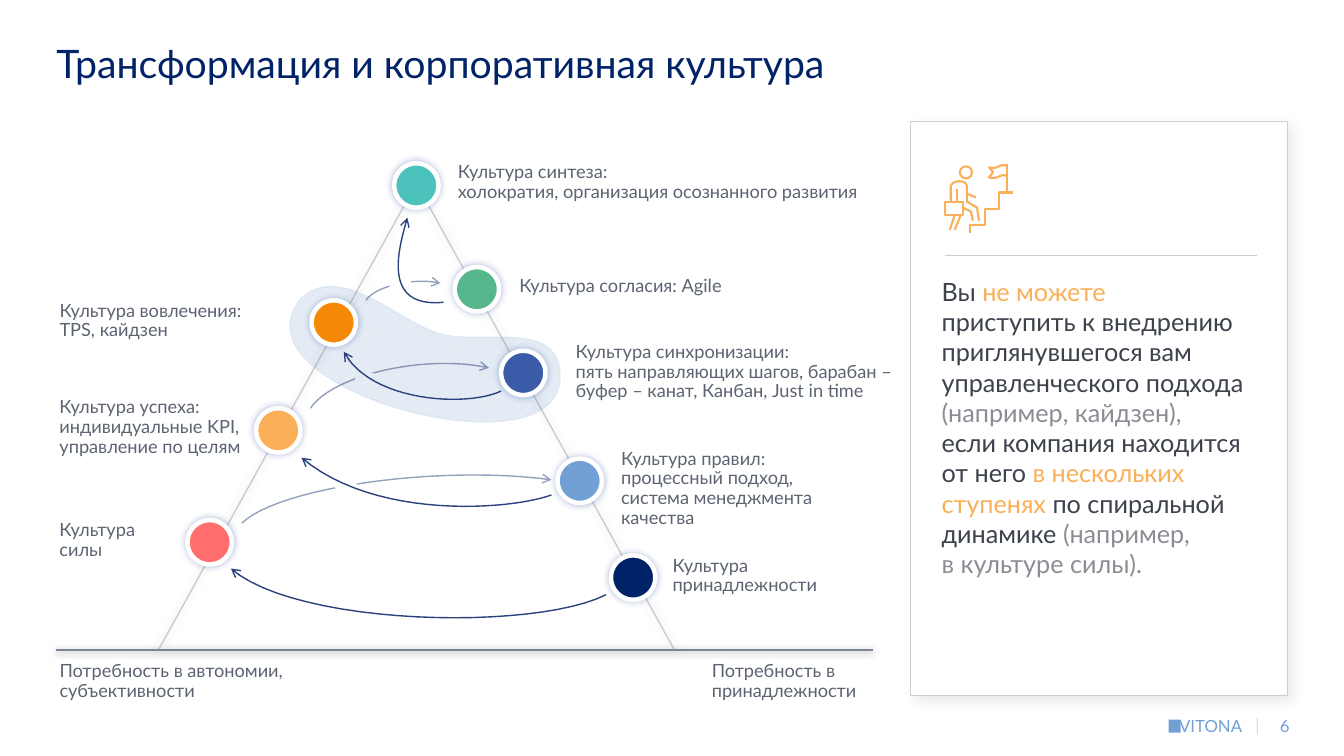
"""Build the slide on transformation and corporate culture."""
from dataclasses import dataclass
from typing import NamedTuple, Optional

from lxml.etree import SubElement
from pptx import Presentation
from pptx.dml.color import RGBColor
from pptx.enum.dml import MSO_PATTERN
from pptx.enum.shapes import MSO_CONNECTOR, MSO_SHAPE
from pptx.enum.text import MSO_ANCHOR, MSO_AUTO_SIZE, PP_ALIGN
from pptx.oxml.ns import qn
from pptx.util import Pt

SCALE = 9144
CURVE_STEPS = 24


@dataclass(frozen=True)
class Theme:
    font: str = "Lato"
    title_size: int = 28
    card_size: int = 18
    label_size: int = 13
    footer_size: int = 12
    navy: str = "002266"
    ink: str = "3D424C"
    grey: str = "5C6472"
    steel: str = "7D8696"
    rule: str = "CBCFD5"
    white: str = "FFFFFF"
    black: str = "000000"
    mist: str = "DFE8F2"
    arrow: str = "2B437C"
    royal: str = "3A5BA7"
    sky: str = "72A0D5"
    amber: str = "FAAF58"
    orange: str = "F68807"
    coral: str = "FF6D6D"
    green: str = "56B78D"
    teal: str = "4CC2BC"


THEME = Theme()


class Box(NamedTuple):
    left: int
    top: int
    width: int
    height: int


class Shadow(NamedTuple):
    color: str
    opacity: int
    blur: int
    distance: int = 0
    angle: int = 0


class Span(NamedTuple):
    text: str
    color: str
    opacity: int = 100


class Outline(NamedTuple):
    color: str
    width: float
    opacity: int = 100


class Label(NamedTuple):
    text: str
    box: Box
    inset_top: int = 5


class Node(NamedTuple):
    left: int
    top: int
    color: str


class Curve(NamedTuple):
    start: tuple
    pieces: list
    opacity: int = 100


class Rule(NamedTuple):
    start: tuple
    end: tuple
    outline: Outline
    shadow: Optional[Shadow] = None


CARD = Box(903, 120, 374, 570)
CARD_SPANS = [
    Span("Вы ", THEME.ink), Span("не можете \n", THEME.amber),
    Span("приступить к внедрению приглянувшегося вам управленческого подхода ", THEME.ink),
    Span("(например, кайдзен), \n", THEME.ink, 60),
    Span("если компания находится \nот него ", THEME.ink),
    Span("в нескольких ступенях ", THEME.amber), Span("по спиральной динамике ", THEME.ink),
    Span("(например, \nв культуре силы).", THEME.ink, 60)]
LABELS = [
    Label("Культура синтеза: \nхолократия, организация осознанного развития", Box(442, 157, 428, 49)),
    Label("Культура согласия: Agile", Box(503, 270, 242, 30)),
    Label("Культура синхронизации: \nпять направляющих шагов, барабан – буфер – канат, Канбан, Just in time",
          Box(559, 335, 338, 69)),
    Label("Культура правил: \nпроцессный подход, \nсистема менеджмента качества", Box(604, 441, 284, 69)),
    Label("Культура принадлежности", Box(655, 547, 191, 49)),
    Label("Потребность в принадлежности", Box(694, 645, 184, 56), 12),
    Label("Потребность в автономии, субъективности", Box(47, 645, 289, 56), 12),
    Label("Культура вовлечения: \nTPS, кайдзен", Box(47, 294, 252, 49)),
    Label("Культура успеха: индивидуальные KPI, управление по целям", Box(47, 390, 223, 73)),
    Label("Культура силы", Box(47, 512, 130, 52))]
NODES = [
    Node(606, 551, THEME.navy), Node(186, 516, THEME.coral), Node(553, 455, THEME.sky),
    Node(497, 348, THEME.royal), Node(451, 265, THEME.green), Node(391, 162, THEME.teal),
    Node(254, 405, THEME.amber), Node(309, 298, THEME.orange)]
RULES = [
    Rule((937, 253), (1247, 253), Outline(THEME.rule, 0.5)),
    Rule((56, 645), (866, 645), Outline(THEME.steel, 1), Shadow(THEME.black, 40, 5, 1, 90)),
    Rule((1247, 712), (1247, 729), Outline(THEME.sky, 0.5, 50))]
BLOB = Curve((555, 381), [(562, 313, 478, 344, 435, 331), (392, 317, 335, 258, 297, 298),
                          (229, 384, 540, 470, 555, 381)])
FORWARD_ARROWS = [
    Curve((240, 519), [(277, 483, 437, 461, 547, 476)], 50),
    Curve((308, 405), [(330, 372, 422, 351, 485, 365)], 50),
    Curve((363, 298), [(372, 284, 411, 275, 437, 281)], 50)]
RETURN_ARROWS = [
    Curve((601, 590), [(530, 626, 294, 621, 229, 564)]),
    Curve((547, 491), [(506, 506, 372, 516, 299, 454)]),
    Curve((497, 388), [(463, 404, 368, 399, 341, 349)]),
    Curve((440, 300), [(377, 306, 396, 245, 404, 216)])]
GAPS = [(331, 473, False), (352, 369, True), (385, 273, False)]
CLIMBER = [
    Curve((962, 231), [(962, 223), (977, 223), (977, 207), (991, 207), (991, 191), (1005, 191)]),
    Curve((999, 191), [(999, 163)]),
    Curve((999, 165), [(993, 161, 989, 169, 981, 166), (985, 171), (981, 176),
                       (989, 179, 993, 171, 999, 175)]),
    Curve((937, 200), [(955, 200), (955, 213), (937, 213), (937, 200)]),
    Curve((943, 200), [(943, 186), (943, 178, 959, 178, 959, 185), (959, 200), (969, 206), (971, 219)]),
    Curve((949, 188), [(949, 200)]),
    Curve((955, 206), [(963, 210), (965, 219)]),
    Curve((959, 192), [(968, 196)]),
    Curve((947, 213), [(942, 228)]),
    Curve((953, 213), [(947, 228)])]


def scaled(values) -> list:
    return [round(value * SCALE) for value in values]


def apply(target, **values) -> None:
    for name, value in values.items():
        setattr(target, name, value)


def fade(element, opacity: int) -> None:
    if opacity < 100:
        for color in element.iter(qn("a:srgbClr")):
            SubElement(color, qn("a:alpha"), val=str(opacity * 1000))


def cast_shadow(effects, shadow: Optional[Shadow]) -> None:
    if shadow:
        outer = SubElement(effects, qn("a:outerShdw"), blurRad=str(Pt(shadow.blur)),
                           dist=str(Pt(shadow.distance)), dir=str(shadow.angle * 60000),
                           algn="ctr", rotWithShape="0")
        SubElement(outer, qn("a:srgbClr"), val=shadow.color)
        fade(outer, shadow.opacity)


def draw_outline(shape, outline: Outline) -> None:
    shape.line.color.rgb = RGBColor.from_string(outline.color)
    shape.line.width = Pt(outline.width)
    fade(shape._element.spPr.find(qn("a:ln")), outline.opacity)


def hatch(shape) -> None:
    shape.fill.patterned()
    shape.fill.pattern = MSO_PATTERN.LIGHT_UPWARD_DIAGONAL
    shape.fill.fore_color.rgb = RGBColor.from_string(THEME.white)
    shape.fill.back_color.rgb = RGBColor.from_string(THEME.mist)


def style(shape, fill: Optional[str], outline: Optional[Outline], shadow: Optional[Shadow] = None):
    if fill:
        shape.fill.solid()
        shape.fill.fore_color.rgb = RGBColor.from_string(fill)
    else:
        shape.fill.background()
    if outline:
        draw_outline(shape, outline)
    else:
        shape.line.fill.background()
    shape.shadow.inherit = False
    cast_shadow(shape._element.spPr.find(qn("a:effectLst")), shadow)
    return shape


def add_preset(page, kind, box: Box, fill=None, outline=None, shadow=None):
    return style(page.shapes.add_shape(kind, *scaled(box)), fill, outline, shadow)


def add_rule(page, rule: Rule) -> None:
    line = page.shapes.add_connector(MSO_CONNECTOR.STRAIGHT, *scaled(rule.start + rule.end))
    draw_outline(line, rule.outline)
    cast_shadow(SubElement(line._element.spPr, qn("a:effectLst")), rule.shadow)


def trace(curve: Curve) -> list:
    points = [curve.start]
    for piece in curve.pieces:
        if len(piece) == 2:
            points.append(piece)
            continue
        corners = [points[-1], piece[:2], piece[2:4], piece[4:]]
        for step in range(1, CURVE_STEPS + 1):
            t = step / CURVE_STEPS
            weights = ((1 - t) ** 3, 3 * t * (1 - t) ** 2, 3 * t * t * (1 - t), t ** 3)
            points.append(tuple(sum(w * corner[axis] for w, corner in zip(weights, corners))
                                for axis in (0, 1)))
    return [tuple(scaled(point)) for point in points]


def add_curve(page, curve: Curve, outline: Outline, closed: bool = False, arrow: bool = False):
    points = trace(curve)
    builder = page.shapes.build_freeform(*points[0], scale=1.0)
    builder.add_line_segments(points[1:], close=closed)
    shape = style(builder.convert_to_shape(), None, outline)
    if arrow:
        SubElement(shape._element.spPr.find(qn("a:ln")), qn("a:tailEnd"), type="arrow")
    return shape


def write(shape, spans: list, size: int, insets=(0, 0, 0, 0), **paragraph_format) -> None:
    frame = shape.text_frame
    left, top, right, bottom = scaled(insets)
    apply(frame, word_wrap=True, margin_left=left, margin_top=top, margin_right=right,
          margin_bottom=bottom, vertical_anchor=MSO_ANCHOR.TOP)
    para = frame.paragraphs[0]
    apply(para, **{"alignment": PP_ALIGN.LEFT, **paragraph_format})
    for span in spans:
        for index, part in enumerate(span.text.split("\n")):
            if index:
                para.add_line_break()
            if part:
                run = para.add_run()
                run.text = part
                apply(run.font, name=THEME.font, size=Pt(size))
                run.font.color.rgb = RGBColor.from_string(span.color)
                fade(run._r, span.opacity)


def add_text(page, box: Box, text: str, color: str, size: int, **settings):
    shape = page.shapes.add_textbox(*scaled(box))
    write(shape, [Span(text, color)], size, **settings)
    return shape


def add_title(page) -> None:
    title = page.shapes.title
    apply(title, **dict(zip(("left", "top", "width", "height"), scaled((56, 33, 1221, 59)))))
    write(title, [Span("Трансформация и корпоративная культура", THEME.navy)],
          THEME.title_size, (0, 5, 10, 5))
    apply(title.text_frame, auto_size=MSO_AUTO_SIZE.NONE, vertical_anchor=MSO_ANCHOR.MIDDLE)


def add_card(page) -> None:
    card = add_preset(page, MSO_SHAPE.RECTANGLE, CARD, THEME.white, Outline(THEME.rule, 0.5),
                      Shadow(THEME.black, 8, 9, 5, 45))
    write(card, CARD_SPANS, THEME.card_size, (31, 154, 28, 5))
    stroke = Outline(THEME.amber, 1.5)
    add_preset(page, MSO_SHAPE.OVAL, Box(952, 165, 12, 12), None, stroke)
    for part in CLIMBER:
        add_curve(page, part, stroke)


def add_pyramid(page) -> None:
    add_preset(page, MSO_SHAPE.ISOSCELES_TRIANGLE, Box(157, 182, 512, 463), None,
               Outline(THEME.steel, 1, 40), Shadow(THEME.black, 40, 8))
    for node in NODES:
        add_preset(page, MSO_SHAPE.OVAL, Box(node.left, node.top, 44, 44), node.color,
                   Outline(THEME.white, 3.25), Shadow(THEME.royal, 40, 5))
    for curve in FORWARD_ARROWS:
        add_curve(page, curve, Outline(THEME.arrow, 1, curve.opacity), arrow=True)
    for left, top, hatched in GAPS:
        gap = add_preset(page, MSO_SHAPE.OVAL, Box(left, top, 23, 15), THEME.white)
        if hatched:
            hatch(gap)
    for curve in RETURN_ARROWS:
        add_curve(page, curve, Outline(THEME.arrow, 1), arrow=True)


def add_footer(page) -> None:
    add_preset(page, MSO_SHAPE.RECTANGLE, Box(1159, 714, 12, 13), THEME.sky)
    for text, left in (("VITONA", 1160), ("6", 1207)):
        add_text(page, Box(left, 710, 72, 18), text, THEME.sky, THEME.footer_size,
                 alignment=PP_ALIGN.RIGHT)


def main() -> None:
    deck = Presentation()
    deck.slide_width, deck.slide_height = scaled((1333, 750))
    page = deck.slides.add_slide(deck.slide_layouts[5])
    add_footer(page)
    hatch(add_curve(page, BLOB, Outline(THEME.mist, 1), closed=True))
    add_title(page)
    add_card(page)
    for rule in RULES:
        add_rule(page, rule)
    for label in LABELS:
        box = add_text(page, label.box, label.text, THEME.grey, THEME.label_size,
                       insets=(12, label.inset_top, 10, 5), line_spacing=0.9)
        box.text_frame.auto_size = MSO_AUTO_SIZE.SHAPE_TO_FIT_TEXT
    add_pyramid(page)
    deck.save("out.pptx")


if __name__ == "__main__":
    main()
